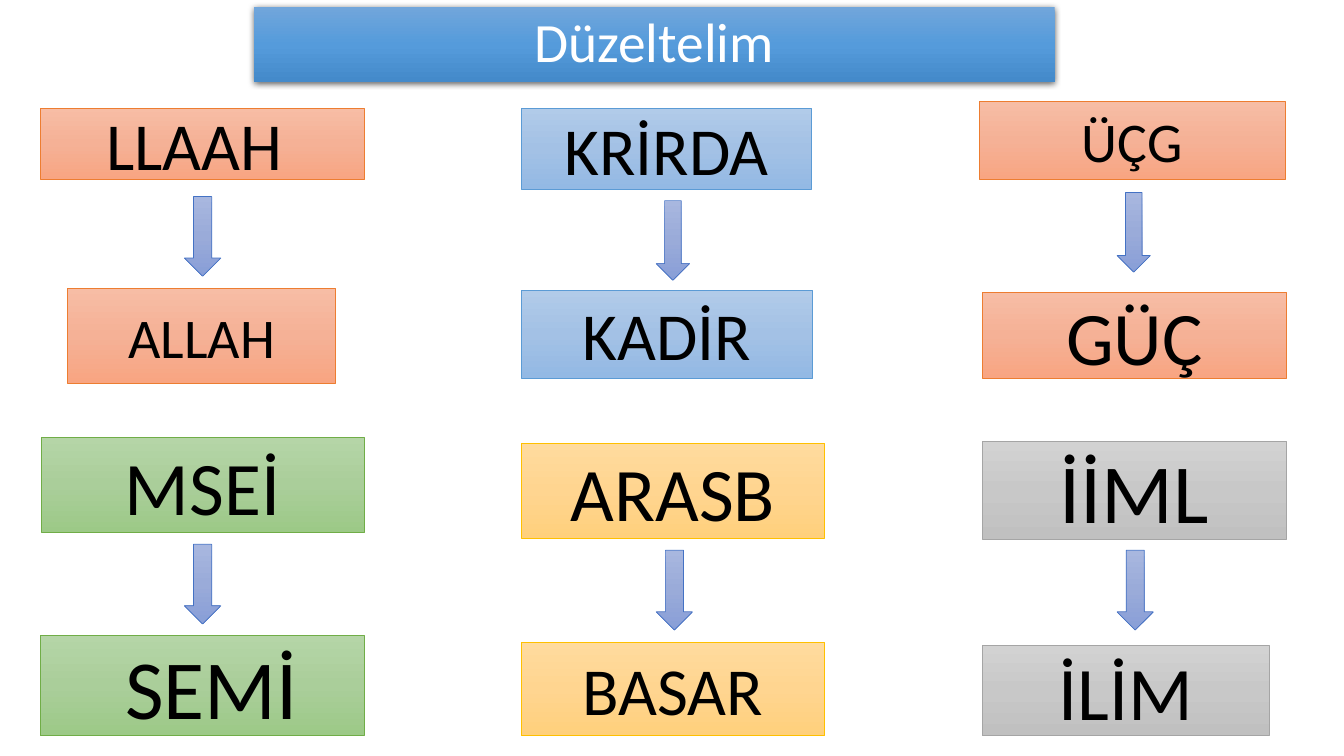
from copy import deepcopy

from lxml.etree import SubElement
from pptx import Presentation
from pptx.dml.color import RGBColor
from pptx.enum.shapes import MSO_SHAPE
from pptx.enum.text import MSO_ANCHOR, PP_ALIGN
from pptx.oxml.ns import qn
from pptx.util import Inches, Pt

COLORS = {
    "title": ("71A6DB", "559BDB", "448ACA"),
    "orange": ("F7BDA5", "F5B196", "F8A582"),
    "blue": ("B1CBE9", "A3C1E5", "93B9E4"),
    "green": ("B5D5A7", "AACE9A", "9CC987"),
    "gold": ("FFDB9E", "FFD590", "FFD07C"),
    "gray": ("D2D2D2", "C8C8C8", "C0C0C0"),
    "arrow": ("A8B7DF", "9AABD9", "889ED7"),
}
LINES = {
    "orange": "ED7D31", "blue": "5B9BD5", "green": "70AD47",
    "gold": "FFC000", "gray": "A5A5A5", "arrow": "4472C4",
}
TEXT = {"title": "FFFFFF", "word": "000000", "shadow": "000000"}
ARROW_HEIGHT = 0.79

# Each pair: color, scrambled word, arrow, solved word
# Word: text, size, box (left, top, width, height); arrow: left, top, width
PAIRS = [
    ("orange", ("LLAAH ", 48, (0.4, 1.07, 3.21, 0.71)), (1.83, 1.95, 0.36),
     ("ALLAH", 40, (0.67, 2.86, 2.66, 0.94))),
    ("blue", ("KRİRDA", 48, (5.17, 1.07, 2.88, 0.81)), (6.51, 1.99, 0.33),
     ("KADİR", 48, (5.17, 2.88, 2.89, 0.87))),
    ("orange", ("ÜÇG", 40, (9.71, 1.01, 3.04, 0.77)), (11.08, 1.91, 0.33),
     ("GÜÇ", 54, (9.74, 2.9, 3.02, 0.85))),
    ("green", ("MSEİ", 54, (0.41, 4.34, 3.2, 0.94)), (1.83, 5.4, 0.36),
     (" SEMİ", 60, (0.4, 6.3, 3.21, 1))),
    ("gold", ("ARASB", 54, (5.17, 4.4, 3.01, 0.94)), (6.51, 5.46, 0.36),
     ("BASAR", 48, (5.17, 6.37, 3.01, 0.93))),
    ("gray", ("İİML", 60, (9.74, 4.38, 3.02, 0.97)), (11.08, 5.46, 0.36),
     ("İLİM", 54, (9.74, 6.4, 2.85, 0.9))),
]


def add_gradient_shape(page, kind, box, color):
    shape = page.shapes.add_shape(kind, *[Inches(length) for length in box])
    shape.shadow.inherit = False
    # Vertical gradient with three stops
    shape.fill.gradient()
    shape.fill.gradient_angle = 270
    stop_list = shape.element.spPr.find(qn("a:gradFill")).find(qn("a:gsLst"))
    stop_list.insert(1, deepcopy(stop_list[0]))
    stops = zip(shape.fill.gradient_stops, COLORS[color], (0, 0.5, 1))
    for stop, value, position in stops:
        stop.color.rgb = RGBColor.from_string(value)
        stop.position = position
    # Outline
    if color in LINES:
        shape.line.color.rgb = RGBColor.from_string(LINES[color])
        shape.line.width = Pt(0.5)
    else:
        shape.line.fill.background()
    return shape


def write_text(shape, text, size, color):
    shape.text_frame.word_wrap = True
    shape.text_frame.vertical_anchor = MSO_ANCHOR.MIDDLE
    para = shape.text_frame.paragraphs[0]
    para.alignment = PP_ALIGN.CENTER
    span = para.add_run()
    span.text = text
    span.font.name = "Calibri"
    span.font.size = Pt(size)
    span.font.color.rgb = RGBColor.from_string(TEXT[color])
    return para


def add_title(page, box):
    banner = add_gradient_shape(page, MSO_SHAPE.RECTANGLE, box, "title")
    para = write_text(banner, "Düzeltelim", 39.6, "title")
    para.line_spacing = 0.9
    # Soft shadow below the banner
    effects = banner.element.spPr.find(qn("a:effectLst"))
    shadow = SubElement(effects, qn("a:outerShdw"), blurRad=str(Pt(4.5)),
                        dist=str(Pt(1.5)), dir="5400000", algn="ctr",
                        rotWithShape="0")
    tone = SubElement(shadow, qn("a:srgbClr"), val=TEXT["shadow"])
    SubElement(tone, qn("a:alpha"), val="63000")


def add_word(page, box, text, size, color):
    card = add_gradient_shape(page, MSO_SHAPE.RECTANGLE, box, color)
    write_text(card, text, size, "word")


def add_pair(page, color, scrambled, arrow, solved):
    for text, size, box in (scrambled, solved):
        add_word(page, box, text, size, color)
    add_gradient_shape(page, MSO_SHAPE.DOWN_ARROW, (*arrow, ARROW_HEIGHT), "arrow")


def main():
    deck = Presentation()
    deck.slide_width = Inches(13.33)
    deck.slide_height = Inches(7.5)
    page = deck.slides.add_slide(deck.slide_layouts[6])
    add_title(page, (2.52, 0.07, 7.94, 0.74))
    for pair in PAIRS:
        add_pair(page, *pair)
    deck.save("out.pptx")


if __name__ == "__main__":
    main()
